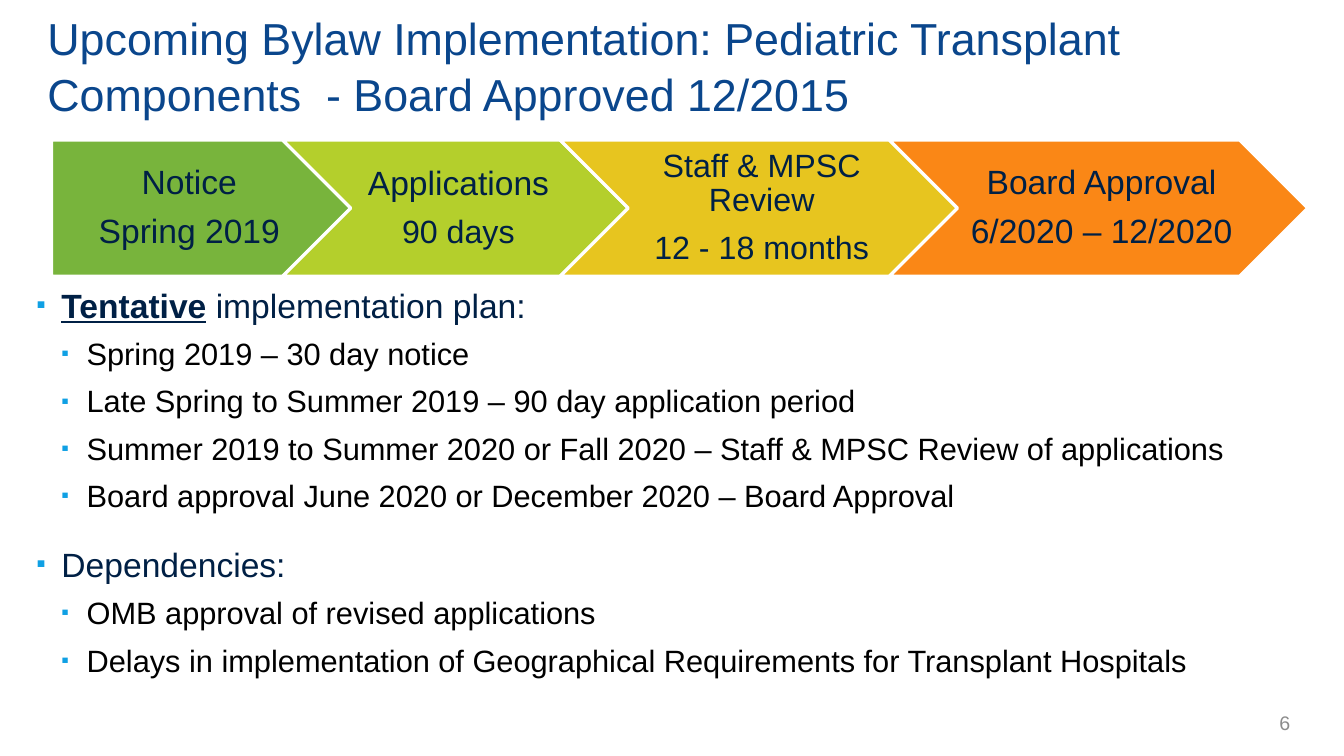
from dataclasses import dataclass

from lxml import etree
from pptx import Presentation
from pptx.dml.color import RGBColor
from pptx.enum.shapes import MSO_SHAPE
from pptx.enum.text import MSO_ANCHOR, MSO_AUTO_SIZE, PP_ALIGN
from pptx.oxml.ns import qn
from pptx.util import Cm, Pt

PENTAGON, CHEVRON = MSO_SHAPE.PENTAGON, MSO_SHAPE.CHEVRON
TOP, MIDDLE = MSO_ANCHOR.TOP, MSO_ANCHOR.MIDDLE
LEFT, CENTER, RIGHT = PP_ALIGN.LEFT, PP_ALIGN.CENTER, PP_ALIGN.RIGHT
NO_AUTOFIT = MSO_AUTO_SIZE.NONE

FONT = "Arial"
NAVY, BLUE, SKY = "002045", "0A468C", "0FA0E4"
BLACK, GRAY, WHITE = "000000", "8C8C8C", "FFFFFF"
ARROW_LEFT, ARROW_TOP, ARROW_HEIGHT = 1.3, 3.53, 3.43
INDENT = 0.635


@dataclass
class Stage:
    kind: MSO_SHAPE
    width: float
    fill: str
    left_inset: float
    lines: list[tuple[str, int]]


@dataclass
class Level:
    size: int
    color: str
    bullet_percent: int
    space_before: int


@dataclass
class Item:
    level: int
    text: str
    emphasis: str = ""


STAGES = [
    Stage(PENTAGON, 7.54, "78B43C", 0.36, [("Notice", 24), ("Spring 2019", 24)]),
    Stage(CHEVRON, 8.71, "B4CF2C", 0.25, [("Applications", 24), ("90 days", 23)]),
    Stage(CHEVRON, 10.01, "E7C51F", 0.25, [("Staff & MPSC Review", 23), ("12 - 18 months", 23)]),
    Stage(CHEVRON, 10.54, "FA8716", 0.25, [("Board Approval", 24), ("6/2020 – 12/2020", 24)]),
]
LEVELS = [Level(24, NAVY, 80, 20), Level(22, BLACK, 70, 6)]
ITEMS = [
    Item(0, " implementation plan:", "Tentative"),
    Item(1, "Spring 2019 – 30 day notice"),
    Item(1, "Late Spring to Summer 2019 – 90 day application period"),
    Item(1, "Summer 2019 to Summer 2020 or Fall 2020 – Staff & MPSC Review of applications"),
    Item(1, "Board approval June 2020 or December 2020 – Board Approval"),
    Item(0, "Dependencies:"),
    Item(1, "OMB approval of revised applications"),
    Item(1, "Delays in implementation of Geographical Requirements for Transplant Hospitals"),
]


def rgb(color: str) -> RGBColor:
    return RGBColor.from_string(color)


def apply(target, values: dict) -> None:
    for name, value in values.items():
        setattr(target, name, value)


def place(shape, left: float, top: float, width: float, height: float) -> None:
    apply(shape, {"left": Cm(left), "top": Cm(top), "width": Cm(width), "height": Cm(height)})


def format_frame(frame, anchor) -> None:
    apply(frame, {"word_wrap": True, "auto_size": NO_AUTOFIT, "vertical_anchor": anchor})


def add_run(paragraph, text: str, size: int, color: str, strong: bool = False) -> None:
    run = paragraph.add_run()
    run.text = text
    apply(run.font, {"name": FONT, "size": Pt(size), "bold": strong, "underline": strong})
    run.font.color.rgb = rgb(color)


def add_bullet(paragraph, level: int, percent: int) -> None:
    properties = paragraph._p.get_or_add_pPr()
    properties.set("marL", str(Cm(INDENT * (level + 1))))
    properties.set("indent", str(-Cm(INDENT)))
    bullet_color = etree.SubElement(properties, qn("a:buClr"))
    etree.SubElement(bullet_color, qn("a:srgbClr"), val=SKY)
    etree.SubElement(properties, qn("a:buSzPct"), val=str(percent * 1000))
    etree.SubElement(properties, qn("a:buFont"), typeface=FONT)
    etree.SubElement(properties, qn("a:buChar"), char="▪")


def add_stage(slide, stage: Stage, left: float) -> None:
    shape = slide.shapes.add_shape(
        stage.kind, Cm(left), Cm(ARROW_TOP), Cm(stage.width), Cm(ARROW_HEIGHT))
    shape.shadow.inherit = False
    shape.fill.solid()
    shape.fill.fore_color.rgb = rgb(stage.fill)
    shape.line.color.rgb = rgb(WHITE)
    shape.line.width = Pt(2.25)
    frame = shape.text_frame
    format_frame(frame, MIDDLE)
    apply(frame, {"margin_left": Cm(stage.left_inset), "margin_right": Cm(0.1),
                  "margin_top": Cm(0.18), "margin_bottom": Cm(0.18)})
    for index, (text, size) in enumerate(stage.lines):
        paragraph = frame.add_paragraph() if index else frame.paragraphs[0]
        apply(paragraph, {"alignment": CENTER, "line_spacing": 0.9, "space_after": Pt(9.5)})
        add_run(paragraph, text, size, NAVY)


def add_items(frame, items: list[Item]) -> None:
    for index, item in enumerate(items):
        paragraph = frame.add_paragraph() if index else frame.paragraphs[0]
        level = LEVELS[item.level]
        add_bullet(paragraph, item.level, level.bullet_percent)
        apply(paragraph, {"level": item.level, "line_spacing": 1.05,
                          "space_before": Pt(level.space_before if index else 0)})
        if item.emphasis:
            add_run(paragraph, item.emphasis, level.size, level.color, strong=True)
        add_run(paragraph, item.text, level.size, level.color)


def main() -> None:
    presentation = Presentation()
    presentation.slide_width, presentation.slide_height = Cm(33.87), Cm(19.05)
    slide = presentation.slides.add_slide(presentation.slide_layouts[1])

    # Title
    title = slide.shapes.title
    place(title, 0.94, 0.43, 32.36, 2.39)
    format_frame(title.text_frame, MIDDLE)
    paragraph = title.text_frame.paragraphs[0]
    apply(paragraph, {"alignment": LEFT, "line_spacing": 1.05})
    add_run(paragraph, "Upcoming Bylaw Implementation: Pediatric Transplant "
            "Components  - Board Approved 12/2015", 32, BLUE)

    # Implementation plan
    body = slide.placeholders[1]
    place(body, 0.66, 6.99, 31.65, 10.72)
    format_frame(body.text_frame, TOP)
    add_items(body.text_frame, ITEMS)

    # Timeline: each arrow tucks into the point of the one before
    left = ARROW_LEFT
    for stage in STAGES:
        add_stage(slide, stage, left)
        left += stage.width - ARROW_HEIGHT / 2

    # Slide number
    number = slide.shapes.add_textbox(Cm(27.03), Cm(17.7), Cm(5.74), Cm(1.02))
    format_frame(number.text_frame, MIDDLE)
    paragraph = number.text_frame.paragraphs[0]
    paragraph.alignment = RIGHT
    add_run(paragraph, "6", 14, GRAY)

    presentation.save("out.pptx")


if __name__ == "__main__":
    main()
